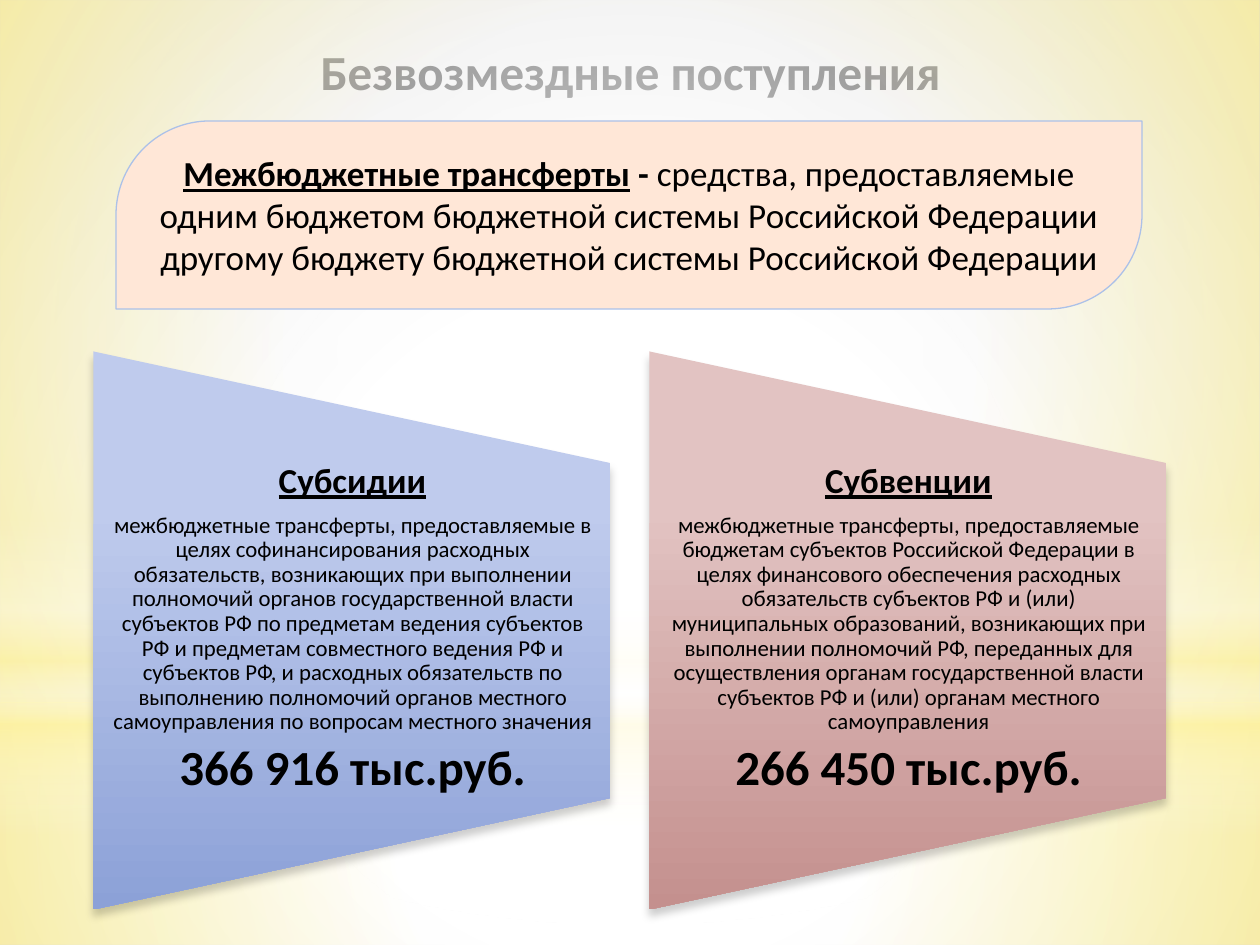
from lxml import etree
from pptx import Presentation
from pptx import util as u
from pptx.dml.color import RGBColor
from pptx.enum import shapes, text
from pptx.oxml import ns

COLORS = {
    "ink": "000000", "white": "FFFFFF", "grey": "D1D1D1", "yellow": "FFF39D",
    "peach": "FFE7D7", "outline": "ACC1E8",
    "blue_light": "BFCBED", "blue_dark": "8CA1D7",
    "red_light": "E2C3C2", "red_dark": "C4908E",
}
SHAPES = shapes.MSO_SHAPE
CARDS = [
    ("Субсидии",
     "межбюджетные трансферты, предоставляемые в целях софинансирования расходных обязательств, "
     "возникающих при выполнении полномочий органов государственной власти субъектов РФ по предметам "
     "ведения субъектов РФ и предметам совместного ведения РФ и субъектов РФ, и расходных обязательств "
     "по выполнению полномочий органов местного самоуправления по вопросам местного значения",
     "366 916 тыс.руб.", "blue"),
    ("Субвенции",
     "межбюджетные трансферты, предоставляемые бюджетам субъектов Российской Федерации в целях "
     "финансового обеспечения расходных обязательств субъектов РФ и (или) муниципальных образований, "
     "возникающих при выполнении полномочий РФ, переданных для осуществления органам государственной "
     "власти субъектов РФ и (или) органам местного самоуправления",
     "266 450 тыс.руб.", "red"),
]


def px(n):
    return u.Emu(round(n * 914400 / 126))


def rgb(name):
    return RGBColor.from_string(COLORS[name])


def sub(parent, tag, **attrs):
    return etree.SubElement(parent, ns.qn(tag), {k: str(v) for k, v in attrs.items()})


class Deck:
    """Holds the text style and the current slide, and adds its elements."""

    def __init__(self, font="Calibri"):
        self.font = font
        self.prs = Presentation()
        self.prs.slide_width, self.prs.slide_height = px(1260), px(945)
        self.s = self.prs.slides.add_slide(self.prs.slide_layouts[5])

    def gradient(self, fill, holder, stops, center=None):
        fill.solid()
        solid = holder.find(".//" + ns.qn("a:solidFill"))
        grad = etree.Element(ns.qn("a:gradFill"), rotWithShape="0")
        gs_list = sub(grad, "a:gsLst")
        for pos, color, alpha in stops:
            gs = sub(gs_list, "a:gs", pos=pos * 1000)
            sub(sub(gs, "a:srgbClr", val=COLORS[color]), "a:alpha", val=alpha * 1000)
        if center:
            edges = {k: v * 1000 for k, v in zip("ltrb", center)}
            sub(sub(grad, "a:path", path="circle"), "a:fillToRect", **edges)
        else:
            sub(grad, "a:lin", ang=5400000, scaled=0)
        solid.getparent().replace(solid, grad)

    def background(self, stops, center):
        self.gradient(self.s.background.fill, self.s.element, stops, center)

    def shape(self, kind, box):
        sp = self.s.shapes.add_shape(kind, *map(px, box))
        sp.shadow.inherit = False
        sp.line.fill.background()
        return sp

    def glow(self, kind, box, stops, center=None):
        sp = self.shape(kind, box)
        self.gradient(sp.fill, sp.element.spPr, stops, center)
        return sp

    def style(self, p, size, bold=None, underline=None):
        p.alignment = text.PP_ALIGN.CENTER
        p.font.name, p.font.size = self.font, u.Pt(size)
        p.font.bold, p.font.underline = bold, underline
        p.font.color.rgb = rgb("ink")

    def title(self, words, box):
        sp = self.s.shapes.title
        sp.left, sp.top, sp.width, sp.height = map(px, box)
        tf = sp.text_frame
        tf.text = words
        tf.word_wrap = False
        tf.auto_size = text.MSO_AUTO_SIZE.SHAPE_TO_FIT_TEXT
        tf.vertical_anchor = text.MSO_ANCHOR.TOP
        self.style(tf.paragraphs[0], 28, True)

    def definition(self, term, meaning, box):
        sp = self.shape(SHAPES.ROUND_2_DIAG_RECTANGLE, box)
        sp.adjustments[0], sp.adjustments[1] = 0.5, 0
        sp.fill.solid()
        sp.fill.fore_color.rgb = rgb("peach")
        sp.line.color.rgb = rgb("outline")
        sp.line.width = u.Pt(0.75)
        tf = sp.text_frame
        tf.word_wrap = True
        tf.vertical_anchor = text.MSO_ANCHOR.MIDDLE
        p = tf.paragraphs[0]
        self.style(p, 20)
        for words, bold, underline in [(term, True, True), (" - ", True, False), (meaning, False, False)]:
            r = p.add_run()
            r.text = words
            r.font.bold, r.font.underline = bold, underline

    def trapezoid(self, box, hue):
        sp = self.glow(SHAPES.FLOWCHART_MANUAL_OPERATION, box,
                       [(28, hue + "_light", 100), (100, hue + "_dark", 100)])
        sp.rotation = 270
        effects = sp.element.spPr.find(ns.qn("a:effectLst"))
        shadow = sub(effects, "a:outerShdw", blurRad=u.Pt(5), dist=u.Pt(4), dir=5400000, rotWithShape=0)
        sub(sub(shadow, "a:srgbClr", val=COLORS["ink"]), "a:alpha", val=20000)

    def card_text(self, box, heading, body, amount):
        tf = self.s.shapes.add_textbox(*map(px, box)).text_frame
        tf.word_wrap = True
        tf.vertical_anchor = text.MSO_ANCHOR.MIDDLE
        tf.margin_left = tf.margin_right = px(18)
        tf.margin_top = tf.margin_bottom = 0
        tf.text = "\n".join((heading, body, amount))
        looks = [(20, True, True), (13, False, False), (28, True, False)]
        for p, look in zip(tf.paragraphs, looks):
            self.style(p, *look)
            p.line_spacing = 0.9
            p.space_after = u.Pt(0)
            after = p._p.pPr.find(ns.qn("a:spcAft"))
            after.remove(after[0])
            sub(after, "a:spcPct", val=35000)


def main():
    deck = Deck()
    middle = (50, 50, 50, 50)
    deck.background([(0, "white", 100), (42, "white", 100), (100, "grey", 100)], (24, 44, 24, 12))
    deck.glow(SHAPES.RECTANGLE, (0, 703, 1260, 242),
              [(0, "white", 91), (37, "white", 76), (100, "yellow", 79)], middle)
    deck.glow(SHAPES.RECTANGLE, (0, 0, 1260, 703),
              [(0, "white", 89), (48, "white", 62), (100, "yellow", 79)], middle)
    deck.glow(SHAPES.RECTANGLE, (0, 519, 1260, 315),
              [(0, "white", 0), (29, "white", 30), (45, "yellow", 40),
               (55, "white", 26), (65, "yellow", 60), (100, "white", 0)])
    deck.glow(SHAPES.OVAL, (0, 221, 1260, 703), [(0, "white", 100), (56, "white", 0)], middle)

    deck.title("Безвозмездные поступления", (304, 35, 653, 72))
    deck.definition("Межбюджетные трансферты",
                    "средства, предоставляемые одним бюджетом бюджетной системы Российской Федерации "
                    "другому бюджету бюджетной системы Российской Федерации",
                    (116, 121, 1026, 188))
    for i, (heading, body, amount, hue) in enumerate(CARDS):
        shift = i * 556
        deck.trapezoid((73 + shift, 372, 558, 517), hue)
        deck.card_text((94 + shift, 462, 517, 335), heading, body, amount)
    deck.prs.save("out.pptx")


if __name__ == "__main__":
    main()
